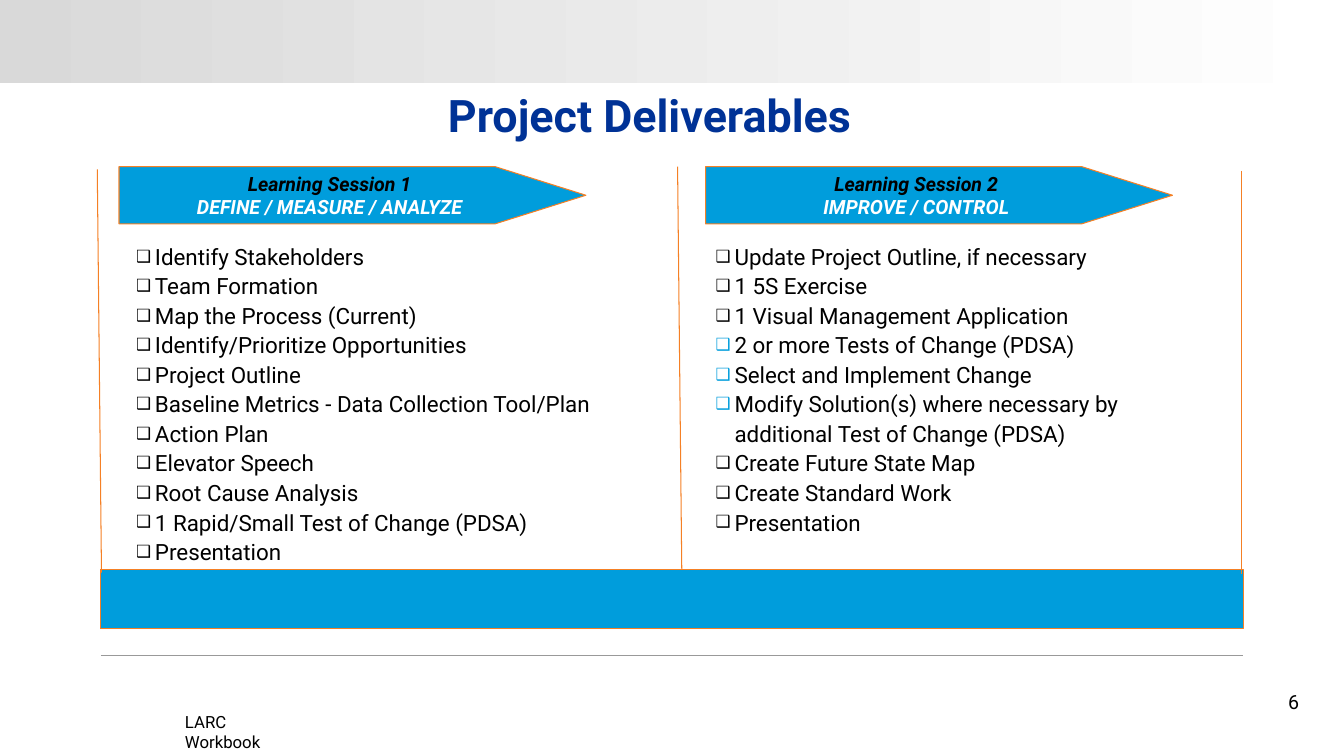
from dataclasses import dataclass

from lxml.etree import SubElement
from pptx import Presentation
from pptx.dml.color import RGBColor as Color
from pptx.enum.shapes import MSO_CONNECTOR as Connector, MSO_SHAPE as Shape
from pptx.enum.text import MSO_ANCHOR as Anchor, MSO_AUTO_SIZE as AutoSize, PP_ALIGN as Align
from pptx.oxml.ns import qn
from pptx.util import Pt


@dataclass(frozen=True)
class Theme:
    font: str = "Roboto"
    navy: str = "003296"
    blue: str = "009DDC"
    orange: str = "F58025"
    black: str = "000000"
    white: str = "FFFFFF"
    band_gray: str = "D9D9D9"
    rule_gray: str = "999999"
    title_size: int = 32
    list_size: int = 16
    label_size: int = 14
    footer_size: int = 12
    line_width: float = 0.75


theme = Theme()


def style_text(paragraph, size, color, emphasis=False, italic=False):
    for run in paragraph.runs:
        run.font.name = theme.font
        run.font.size = Pt(size)
        run.font.bold = emphasis
        run.font.italic = italic
        run.font.color.rgb = Color.from_string(color)


def add_box(kind, left, top, width, height):
    shape = slide.shapes.add_shape(kind, Pt(left), Pt(top), Pt(width), Pt(height))
    shape.shadow.inherit = False
    shape.fill.solid()
    shape.fill.fore_color.rgb = Color.from_string(theme.blue)
    shape.line.color.rgb = Color.from_string(theme.orange)
    shape.line.width = Pt(theme.line_width)
    return shape


presentation = Presentation()
presentation.slide_width = Pt(960)
presentation.slide_height = Pt(540)
slide = presentation.slides.add_slide(presentation.slide_layouts[3])

header_band = add_box(Shape.RECTANGLE, 0, 0, 960, 59)
header_band.line.fill.background()
header_band.fill.gradient()
header_band.fill.gradient_angle = 0
for stop, color in zip(header_band.fill.gradient_stops, (theme.band_gray, theme.white)):
    stop.color.rgb = Color.from_string(color)

title = slide.shapes.title
title.left, title.top, title.width, title.height = Pt(320), Pt(62.6), Pt(333), Pt(44.6)
title_frame = title.text_frame
title_frame.text = "Project Deliverables"
title_frame.auto_size = AutoSize.NONE
title_frame.vertical_anchor = Anchor.MIDDLE
title_frame.margin_left = title_frame.margin_right = 0
title_paragraph = title_frame.paragraphs[0]
title_paragraph.alignment = Align.LEFT
title_paragraph.line_spacing = 0.85
style_text(title_paragraph, theme.title_size, theme.navy, emphasis=True)

sessions = [
    (85, 90, "Learning Session 1", "DEFINE / MEASURE / ANALYZE", [
        "Identify Stakeholders",
        "Team Formation",
        "Map the Process (Current)",
        "Identify/Prioritize Opportunities",
        "Project Outline",
        "Baseline Metrics - Data Collection Tool/Plan",
        "Action Plan",
        "Elevator Speech",
        "Root Cause Analysis",
        "1 Rapid/Small Test of Change (PDSA)",
        "Presentation",
    ], ()),
    (504, 504, "Learning Session 2", "IMPROVE / CONTROL", [
        "Update Project Outline, if necessary",
        "1 5S Exercise",
        "1 Visual Management Application",
        "2 or more Tests of Change (PDSA)",
        "Select and Implement Change",
        "Modify Solution(s) where necessary by additional Test of Change (PDSA)",
        "Create Future State Map",
        "Create Standard Work",
        "Presentation",
    ], range(3, 6)),
]

for index, (arrow_left, list_left, session, phases, deliverables, blue_bullets) in enumerate(sessions, 1):
    arrow = add_box(Shape.PENTAGON, arrow_left, 119, 333.5, 41)
    arrow.adjustments[0] = 1.586
    arrow.text_frame.text = f"{session}\n{phases}"
    for paragraph, color in zip(arrow.text_frame.paragraphs, (theme.black, theme.white)):
        paragraph.alignment = Align.CENTER
        style_text(paragraph, theme.label_size, color, emphasis=True, italic=True)

    checklist = slide.placeholders[index]
    checklist.left, checklist.top = Pt(list_left), Pt(168)
    checklist.width, checklist.height = Pt(358), Pt(240)
    checklist.text_frame.text = "\n".join(deliverables)
    checklist.text_frame.auto_size = AutoSize.NONE
    checklist.text_frame.vertical_anchor = Anchor.TOP
    for row, paragraph in enumerate(checklist.text_frame.paragraphs):
        properties = paragraph._p.get_or_add_pPr()
        properties.set("marL", str(Pt(13.5)))
        properties.set("indent", str(-Pt(13.5)))
        if row in blue_bullets:
            bullet_color = SubElement(properties, qn("a:buClr"))
            SubElement(bullet_color, qn("a:srgbClr"), val=theme.blue)
        SubElement(properties, qn("a:buSzPct"), val="75000")
        SubElement(properties, qn("a:buChar"), char="❑")
        paragraph.line_spacing = 1.1
        paragraph.space_before = Pt(0)
        style_text(paragraph, theme.list_size, theme.black)

add_box(Shape.RECTANGLE, 71.5, 407, 816.5, 42)

rules = [
    (69.5, 121, 72.5, 409, theme.orange),
    (484, 119, 487, 407, theme.orange),
    (887, 122, 887, 410, theme.orange),
    (72, 468, 888, 468, theme.rule_gray),
]
for start_x, start_y, end_x, end_y, color in rules:
    rule = slide.shapes.add_connector(
        Connector.STRAIGHT, Pt(start_x), Pt(start_y), Pt(end_x), Pt(end_y))
    rule.line.color.rgb = Color.from_string(color)
    rule.line.width = Pt(theme.line_width)
    SubElement(rule._element.spPr, qn("a:effectLst"))

footers = [
    ("LARC Workbook", 125, 505, 80, 35, theme.footer_size, Align.LEFT, Anchor.TOP),
    ("6", 720, 487, 215, 29, theme.label_size, Align.RIGHT, Anchor.MIDDLE),
]
for text, left, top, width, height, size, alignment, anchor in footers:
    footer = slide.shapes.add_textbox(Pt(left), Pt(top), Pt(width), Pt(height))
    footer.text_frame.word_wrap = True
    footer.text_frame.vertical_anchor = anchor
    footer.text_frame.text = text
    paragraph = footer.text_frame.paragraphs[0]
    paragraph.alignment = alignment
    style_text(paragraph, size, theme.black)

presentation.save("out.pptx")
